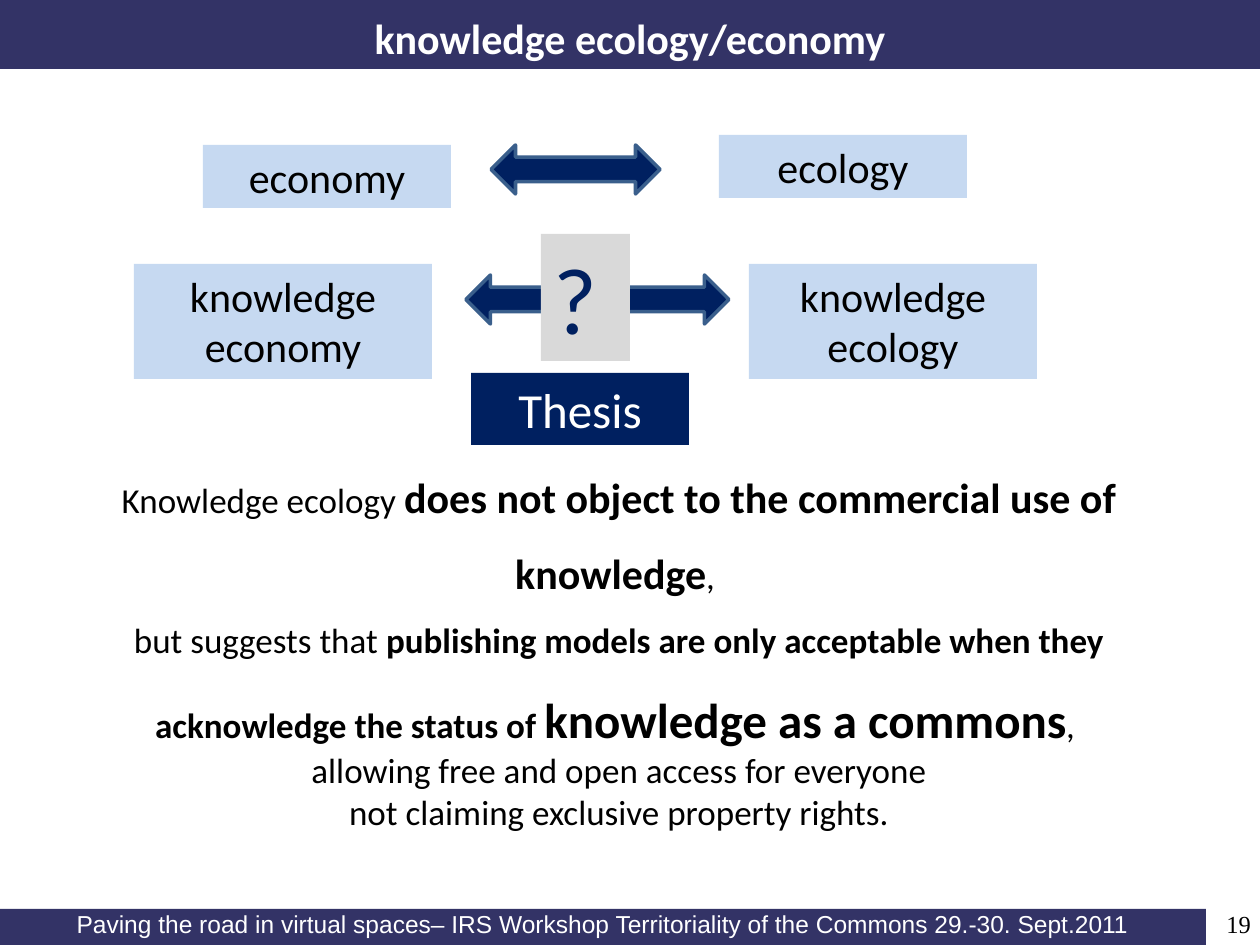
from dataclasses import dataclass

import pptx
import pptx.dml.color
import pptx.enum.shapes
import pptx.enum.text
import pptx.util

EMU_PER_PX = 914400 / 126
SHAPE = pptx.enum.shapes.MSO_SHAPE
ALIGN = pptx.enum.text.PP_ALIGN
ANCHOR = pptx.enum.text.MSO_ANCHOR
BAR, NAVY, PALE, GREY = "333366", "002060", "C6D9F1", "D9D9D9"
BLACK, WHITE, ARROW_EDGE = "000000", "FFFFFF", "3A5F8C"


@dataclass(frozen=True)
class Box:
    left: int
    top: int
    width: int
    height: int


@dataclass(frozen=True)
class Run:
    text: str
    size: int
    bold: bool = False
    color: str = BLACK
    font: str = "Calibri"


@dataclass(frozen=True)
class Paragraph:
    runs: tuple[Run, ...]
    align: ALIGN = ALIGN.CENTER
    spacing: float = 1.0


@dataclass(frozen=True)
class Label:
    box: Box
    fill: str
    paragraph: Paragraph


def px(value: int) -> int:
    return round(value * EMU_PER_PX)


def rgb(value: str) -> pptx.dml.color.RGBColor:
    return pptx.dml.color.RGBColor.from_string(value)


def place(box: Box) -> tuple[int, ...]:
    return tuple(px(v) for v in (box.left, box.top, box.width, box.height))


def paint(s, fill: str) -> None:
    s.fill.solid()
    s.fill.fore_color.rgb = rgb(fill)


def write(s, paragraphs: tuple[Paragraph, ...], inset: bool = True,
          anchor: ANCHOR = ANCHOR.TOP) -> None:
    tf = s.text_frame
    frame = dict(word_wrap=True, vertical_anchor=anchor,
                 auto_size=pptx.enum.text.MSO_AUTO_SIZE.NONE)
    if not inset:
        sides = ("left", "top", "right", "bottom")
        frame.update({f"margin_{side}": 0 for side in sides})
    for name, value in frame.items():
        setattr(tf, name, value)
    for i, paragraph in enumerate(paragraphs):
        p = tf.add_paragraph() if i else tf.paragraphs[0]
        p.alignment = paragraph.align
        p.line_spacing = paragraph.spacing
        for run in paragraph.runs:
            r = p.add_run()
            r.text = run.text
            font = dict(name=run.font, size=pptx.util.Pt(run.size), bold=run.bold)
            for name, value in font.items():
                setattr(r.font, name, value)
            r.font.color.rgb = rgb(run.color)


def add_shape(slide, kind: SHAPE, box: Box, fill: str):
    s = slide.shapes.add_shape(kind, *place(box))
    s.shadow.inherit = False
    paint(s, fill)
    s.line.fill.background()
    return s


def add_label(slide, label: Label, **frame) -> None:
    s = add_shape(slide, SHAPE.RECTANGLE, label.box, label.fill)
    write(s, (label.paragraph,), **frame)


def add_text(slide, box: Box, paragraphs: tuple[Paragraph, ...], **frame) -> None:
    write(slide.shapes.add_textbox(*place(box)), paragraphs, **frame)


def add_arrow(slide, box: Box) -> None:
    s = add_shape(slide, SHAPE.LEFT_RIGHT_ARROW, box, NAVY)
    s.line.color.rgb = rgb(ARROW_EDGE)
    s.line.width = pptx.util.Pt(2)


def set_title(slide, box: Box, paragraph: Paragraph) -> None:
    s = slide.shapes.title
    for name, value in zip(("left", "top", "width", "height"), place(box)):
        setattr(s, name, value)
    paint(s, BAR)
    write(s, (paragraph,), anchor=ANCHOR.BOTTOM)


def line(text: str, size: int, color: str = BLACK, **style) -> Paragraph:
    return Paragraph((Run(text, size, color=color),), **style)


TITLE = Paragraph((Run("knowledge ecology/economy", 24, True, WHITE),))
FOOTER = Label(
    Box(0, 909, 1206, 36), BAR,
    Paragraph((Run("Paving the road in virtual spaces– IRS Workshop "
                   "Territoriality of the Commons 29.-30. Sept.2011",
                   14, color=WHITE, font="Arial"),)))
NUMBER = Paragraph((Run("19", 14, font="Times New Roman"),), ALIGN.RIGHT)
THESIS = (
    Paragraph((
        Run("Knowledge ecology ", 20),
        Run("does not object to the commercial use of knowledge", 24, True),
        Run(", ", 20)), spacing=1.5),
    Paragraph((
        Run("but suggests that", 20),
        Run(" publishing models are only acceptable when they "
            "acknowledge the status of ", 20, True),
        Run("knowledge as a commons", 28, True),
        Run(", ", 20)), spacing=1.5),
    line("allowing free and open access for everyone", 20),
    line("not claiming exclusive property rights.", 20),
)
ARROWS = (Box(491, 145, 169, 49), Box(466, 275, 263, 49))
LABELS = (
    Label(Box(203, 145, 248, 63), PALE, line("economy", 24)),
    Label(Box(719, 135, 248, 63), PALE, line("ecology", 24)),
    Label(Box(134, 264, 298, 115), PALE, line("knowledge economy", 24)),
    Label(Box(749, 264, 288, 115), PALE, line("knowledge ecology", 24)),
    Label(Box(541, 234, 89, 127), GREY, line("?", 54, NAVY, align=ALIGN.LEFT)),
    Label(Box(471, 373, 218, 72), NAVY, line("Thesis", 28, WHITE)),
)


def main() -> None:
    prs = pptx.Presentation()
    prs.slide_width, prs.slide_height = px(1260), px(945)
    slide = prs.slides.add_slide(prs.slide_layouts[5])
    set_title(slide, Box(0, 0, 1260, 69), TITLE)
    add_label(slide, FOOTER, inset=False)
    add_text(slide, Box(44, 440, 1150, 410), THESIS)
    add_text(slide, Box(1166, 909, 85, 36), (NUMBER,), inset=False)
    for arrow in ARROWS:
        add_arrow(slide, arrow)
    for label in LABELS:
        add_label(slide, label)
    prs.save("out.pptx")


if __name__ == "__main__":
    main()
